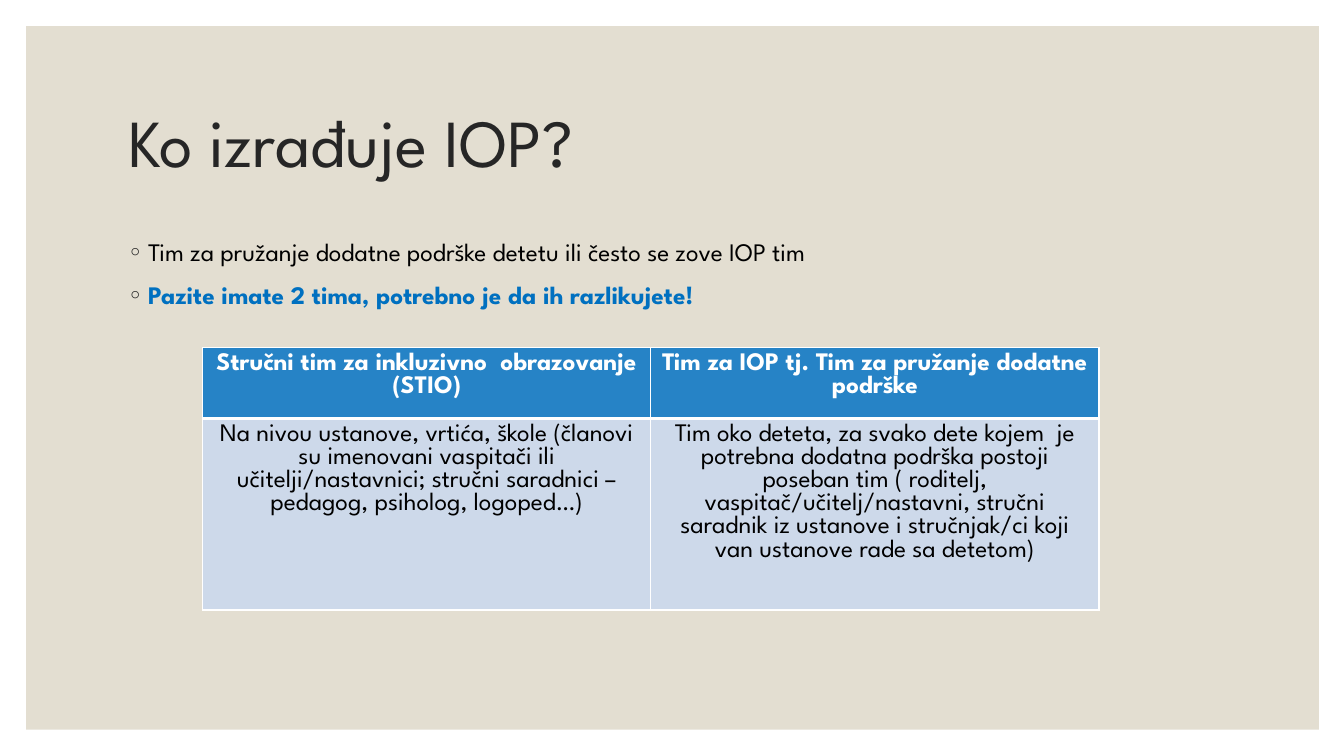
import pptx
import pptx.util
import pptx.dml.color
import pptx.enum.shapes
import pptx.enum.text
import pptx.oxml
import pptx.oxml.ns
from dataclasses import dataclass

Inches = pptx.util.Inches
Pt = pptx.util.Pt
Align = pptx.enum.text.PP_ALIGN
Anchor = pptx.enum.text.MSO_ANCHOR


@dataclass(frozen=True)
class Theme:
    font: str = "League Spartan"
    bullet_font: str = "Garamond"
    title_size: int = 48
    text_size: int = 18
    panel: str = "E3DED1"
    dark: str = "262626"
    black: str = "000000"
    white: str = "FFFFFF"
    accent: str = "0070C0"
    header: str = "2683C6"
    cell: str = "CDD9EA"


THEME = Theme()

POINTS = [
    ("Tim za pružanje dodatne podrške detetu ili često se zove IOP tim", THEME.black, False),
    ("Pazite imate 2 tima, potrebno je da ih razlikujete!", THEME.accent, True),
]
TEAMS = [
    ["Stručni tim za inkluzivno  obrazovanje (STIO)",
     "Tim za IOP tj. Tim za pružanje dodatne podrške"],
    ["Na nivou ustanove, vrtića, škole (članovi su imenovani vaspitači ili "
     "učitelji/nastavnici; stručni saradnici – pedagog, psiholog, logoped…)",
     "Tim oko deteta, za svako dete kojem  je potrebna dodatna podrška postoji "
     "poseban tim ( roditelj, vaspitač/učitelj/nastavni, stručni saradnik iz "
     "ustanove i stručnjak/ci koji van ustanove rade sa detetom)"],
]


def rgb(value):
    return pptx.dml.color.RGBColor.from_string(value)


def apply(target, values):
    for name, value in values.items():
        setattr(target, name, value)


def write(para, text, size, color, bold=False, **layout):
    span = para.add_run()
    span.text = text
    apply(span.font, {"name": THEME.font, "size": Pt(size), "bold": bold})
    span.font.color.rgb = rgb(color)
    apply(para, layout)


def add_xml(parent, markup):
    namespace = pptx.oxml.ns.nsdecls("a")
    parent.append(pptx.oxml.parse_xml(markup.replace(" ", f" {namespace} ", 1)))


def add_panel(page, box):
    kind = pptx.enum.shapes.MSO_SHAPE.RECTANGLE
    panel = page.shapes.add_shape(kind, *map(Inches, box))
    panel.shadow.inherit = False
    panel.fill.solid()
    panel.fill.fore_color.rgb = rgb(THEME.panel)
    panel.line.fill.background()


def add_title(page, box, text):
    title = page.shapes.title
    apply(title, dict(zip(("left", "top", "width", "height"), map(Inches, box))))
    apply(title.text_frame, {"word_wrap": True, "vertical_anchor": Anchor.MIDDLE})
    write(title.text_frame.paragraphs[0], text, THEME.title_size, THEME.dark,
          alignment=Align.LEFT, line_spacing=0.9)
    page.shapes._spTree.append(title._element)


def add_points(page, box, points):
    frame = page.shapes.add_textbox(*map(Inches, box)).text_frame
    frame.word_wrap = True
    for index, (text, color, bold) in enumerate(points):
        para = frame.add_paragraph() if index else frame.paragraphs[0]
        write(para, text, THEME.text_size, color, bold, space_before=Pt(9))
        properties = para._p.get_or_add_pPr()
        properties.set("marL", str(Inches(0.2)))
        properties.set("indent", str(-Inches(0.2)))
        add_xml(properties, f'<a:buClr ><a:srgbClr val="{THEME.dark}"/></a:buClr>')
        add_xml(properties, f'<a:buFont typeface="{THEME.bullet_font}"/>')
        add_xml(properties, '<a:buChar char="◦"/>')


def add_borders(cell, widths):
    properties = cell._tc.get_or_add_tcPr()
    for position, (side, width) in enumerate(widths.items()):
        line = pptx.oxml.parse_xml(
            f'<a:{side} {pptx.oxml.ns.nsdecls("a")} w="{Pt(width)}"><a:solidFill>'
            f'<a:srgbClr val="{THEME.white}"/></a:solidFill></a:{side}>')
        properties.insert(position, line)


def add_teams(page, box, rows):
    shape = page.shapes.add_table(len(rows), len(rows[0]), *map(Inches, box))
    table = shape.table
    styles = [(THEME.header, THEME.white, True), (THEME.cell, THEME.black, False)]
    edges = [{"lnL": 1, "lnR": 1, "lnT": 1, "lnB": 3},
             {"lnL": 1, "lnR": 1, "lnT": 3, "lnB": 1}]
    for row, height in zip(table.rows, (0.55, 1.48)):
        row.height = Inches(height)
    for r, (texts, (fill, color, bold)) in enumerate(zip(rows, styles)):
        for c, text in enumerate(texts):
            cell = table.cell(r, c)
            cell.fill.solid()
            cell.fill.fore_color.rgb = rgb(fill)
            write(cell.text_frame.paragraphs[0], text, THEME.text_size, color, bold,
                  alignment=Align.CENTER)
            add_borders(cell, edges[r])


def build_teams_slide(deck):
    page = deck.slides.add_slide(deck.slide_layouts[5])
    page.background.fill.solid()
    page.background.fill.fore_color.rgb = rgb(THEME.white)
    add_panel(page, (0.26, 0.26, 12.82, 6.98))
    add_title(page, (1.17, 0.7, 11, 1.5), "Ko izrađuje IOP?")
    add_points(page, (1.17, 2.3, 11, 4.3), POINTS)
    add_teams(page, (2.01, 3.45, 8.89, 2.03), TEAMS)


def main():
    deck = pptx.Presentation()
    apply(deck, {"slide_width": Inches(13.33), "slide_height": Inches(7.5)})
    build_teams_slide(deck)
    deck.save("out.pptx")


if __name__ == "__main__":
    main()
